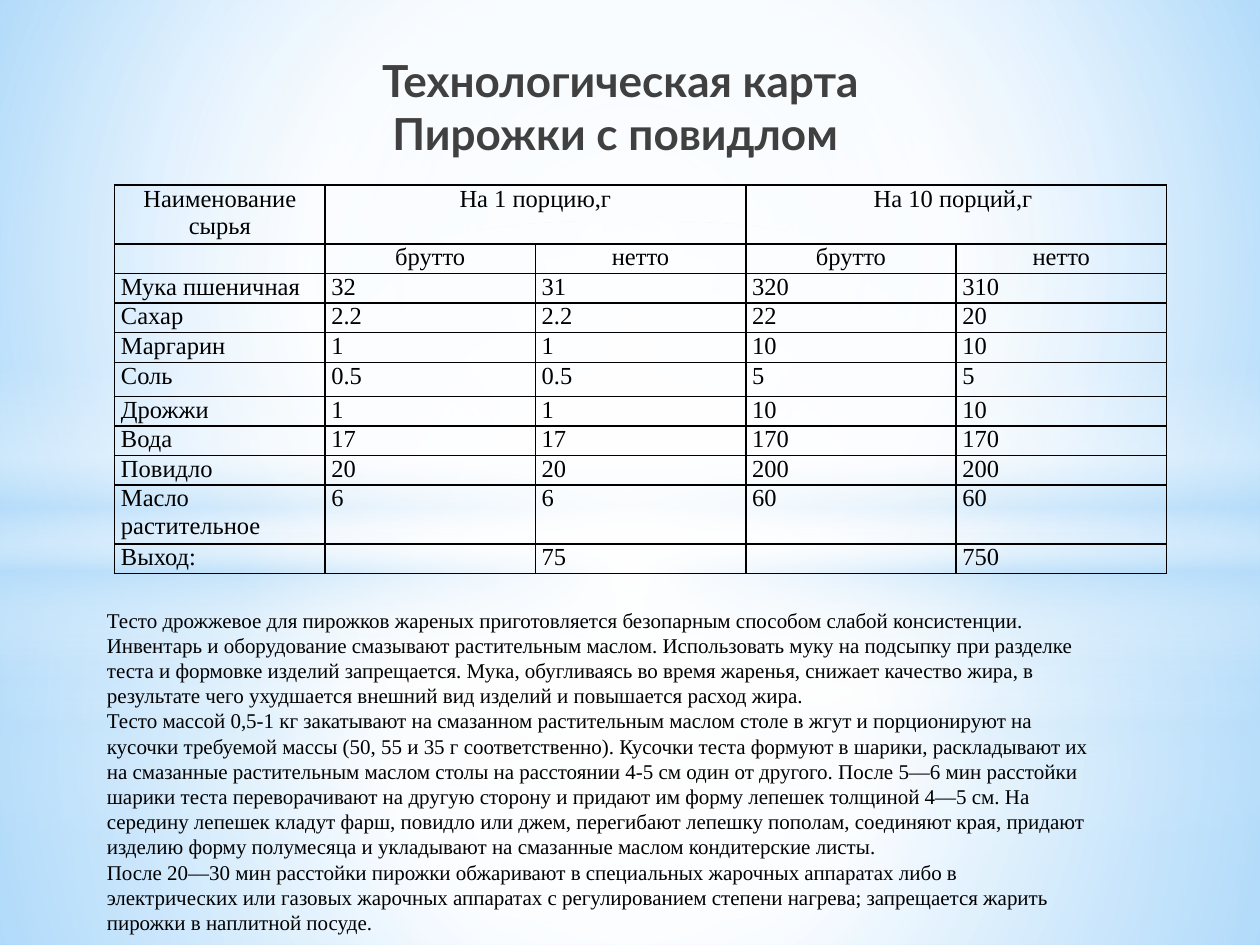
from lxml.etree import SubElement
from pptx import Presentation
from pptx.dml.color import RGBColor
from pptx.enum.shapes import MSO_SHAPE as SHAPE
from pptx.enum.text import MSO_ANCHOR as ANCHOR, PP_ALIGN as ALIGN
from pptx.oxml.ns import qn
from pptx.util import Inches, Pt


def set_gradient(fill, owner, stops, centre=None):
    """Stops are (position, colour, opacity); without a centre it runs downwards."""
    fill.gradient()
    grad = owner.find(".//" + qn("a:gradFill"))
    for child in list(grad):
        grad.remove(child)
    gs_list = SubElement(grad, qn("a:gsLst"))
    for pos, color, alpha in stops:
        gs = SubElement(gs_list, qn("a:gs"), pos=str(pos * 1000))
        clr = SubElement(gs, qn("a:srgbClr"), val=color)
        if alpha < 100:
            SubElement(clr, qn("a:alpha"), val=str(alpha * 1000))
    if centre:
        circle = SubElement(grad, qn("a:path"), path="circle")
        sides = {side: str(v * 1000) for side, v in zip("ltrb", centre)}
        SubElement(circle, qn("a:fillToRect"), **sides)
    else:
        SubElement(grad, qn("a:lin"), ang="5400000", scaled="0")


def style_runs(p, font, size, color, bold=False):
    for r in p.runs:
        r.font.name = font
        r.font.size = Pt(size)
        r.font.bold = bold
        r.font.color.rgb = RGBColor.from_string(color)


prs = Presentation()
prs.slide_width, prs.slide_height = Inches(10), Inches(7.5)
slide = prs.slides.add_slide(prs.slide_layouts[6])
W = prs.slide_width

# Background
set_gradient(slide.background.fill, slide.element,
             [(0, "9ED5FF", 100), (60, "FFFFFF", 100), (100, "5BB9FF", 100)],
             (20, 10, 20, 60))

# Two sets of light layers: floor, sky, horizon band, glow
MIDDLE = (50, 50, 50, 50)
BAND = [(0, "FFFFFF", 0), (29, "FFFFFF", 30), (45, "B4DCFA", 40),
        (55, "FFFFFF", 26), (65, "B4DCFA", 60), (100, "FFFFFF", 0)]
for horizon, band_top, extra, glow_end in [(5.58, 4.12, 0, 56), (4.23, 2.9, 1, 54)]:
    floor = [(0, "FFFFFF", 91 + extra), (37, "FFFFFF", 76 + extra), (100, "B4DCFA", 79 + extra)]
    sky = [(0, "FFFFFF", 89 + extra), (48, "FFFFFF", 62 + extra), (100, "B4DCFA", 79 + extra)]
    glow = [(0, "FFFFFF", 100), (glow_end, "FFFFFF", 0)]
    for kind, top, height, stops, centre in [
            (SHAPE.RECTANGLE, horizon, 7.5 - horizon, floor, MIDDLE),
            (SHAPE.RECTANGLE, 0, horizon, sky, MIDDLE),
            (SHAPE.RECTANGLE, band_top, 2.5, BAND, None),
            (SHAPE.OVAL, 1.75, 5.58, glow, MIDDLE)]:
        sp = slide.shapes.add_shape(kind, 0, Inches(top), W, Inches(height))
        sp.shadow.inherit = False
        sp.line.fill.background()
        set_gradient(sp.fill, sp.element, stops, centre)

# Title
title = slide.shapes.add_textbox(Inches(1.66), Inches(0.52), Inches(6.53), Inches(0.79))
tf = title.text_frame
tf.word_wrap = True
tf.vertical_anchor = ANCHOR.BOTTOM
p = tf.paragraphs[0]
p.text = "Технологическая карта\nПирожки с повидлом "
p.alignment = ALIGN.CENTER
style_runs(p, "Lato", 25.2, "404040", bold=True)

# Ingredient table
ROWS = [
    ["Наименование сырья", "На 1 порцию,г", "", "На 10 порций,г ", ""],
    ["", "брутто", "нетто", "брутто", "нетто"],
    ["Мука пшеничная", "32", "31", "320", "310"],
    ["Сахар", "2.2", "2.2", "22", "20"],
    ["Маргарин", "1", "1", "10", "10"],
    ["Соль", "0.5", "0.5", "5", "5"],
    ["Дрожжи", "1", "1", "10", "10"],
    ["Вода", "17", "17", "170", "170"],
    ["Повидло", "20", "20", "200", "200"],
    ["Масло растительное", "6", "6", "60", "60"],
    ["Выход:", "", "75", "", "750"],
]
HEIGHTS = [0.24, 0.23, 0.23, 0.23, 0.24, 0.27, 0.23, 0.23, 0.22, 0.24, 0.23]
HEADER_ROWS = 2
table = slide.shapes.add_table(len(ROWS), 5, Inches(0.91), Inches(1.47),
                               Inches(8.35), Inches(sum(HEIGHTS))).table
table.first_row = table.horz_banding = False
for col in table.columns:
    col.width = Inches(1.67)
for i, (row, height) in enumerate(zip(ROWS, HEIGHTS)):
    table.rows[i].height = Inches(height)
    for j, text in enumerate(row):
        cell = table.cell(i, j)
        cell.margin_left = cell.margin_right = Inches(0.05)
        cell.margin_top = cell.margin_bottom = 0
        p = cell.text_frame.paragraphs[0]
        if text:
            p.text = text
            style_runs(p, "Times New Roman", 14, "000000")
        else:
            SubElement(p._p, qn("a:endParaRPr"), sz="1400")
        p.alignment = ALIGN.CENTER if i < HEADER_ROWS else ALIGN.LEFT
        tc_pr = cell._tc.get_or_add_tcPr()
        for side in "LRTB":
            ln = SubElement(tc_pr, qn("a:ln" + side), w=str(Pt(1)))
            line_fill = SubElement(ln, qn("a:solidFill"))
            SubElement(line_fill, qn("a:srgbClr"), val="000000")
        cell.fill.background()
for j in (1, 3):
    table.cell(0, j).merge(table.cell(0, j + 1))

# Method
METHOD = [
    "Тесто дрожжевое для пирожков жареных приготовляется безопарным способом слабой "
    "консистенции. Инвентарь и оборудование смазывают растительным маслом. Использовать "
    "муку на подсыпку при разделке теста и формовке изделий запрещается. Мука, обугливаясь "
    "во время жаренья, снижает качество жира, в результате чего ухудшается внешний вид "
    "изделий и повышается расход жира.",
    "Тесто массой 0,5-1 кг закатывают на смазанном растительным маслом столе в жгут и "
    "порционируют на кусочки требуемой массы (50, 55 и 35 г соответственно). Кусочки теста "
    "формуют в шарики, раскладывают их на смазанные растительным маслом столы на расстоянии "
    "4-5 см один от другого. После 5—6 мин расстойки шарики теста переворачивают на другую "
    "сторону и придают им форму лепешек толщиной 4—5 см. На середину лепешек кладут фарш, "
    "повидло или джем, перегибают лепешку пополам, соединяют края, придают изделию форму "
    "полумесяца и укладывают на смазанные маслом кондитерские листы.",
    "После 20—30 мин расстойки пирожки обжаривают в специальных жарочных аппаратах либо в "
    "электрических или газовых жарочных аппаратах с регулированием степени нагрева; "
    "запрещается жарить пирожки в наплитной посуде.",
]
method = slide.shapes.add_textbox(Inches(0.75), Inches(4.77), Inches(8.03), Inches(2.73))
tf = method.text_frame
tf.word_wrap = True
p = tf.paragraphs[0]
p.text = "\n".join(METHOD)
style_runs(p, "Times New Roman", 12, "000000")

prs.save("out.pptx")
